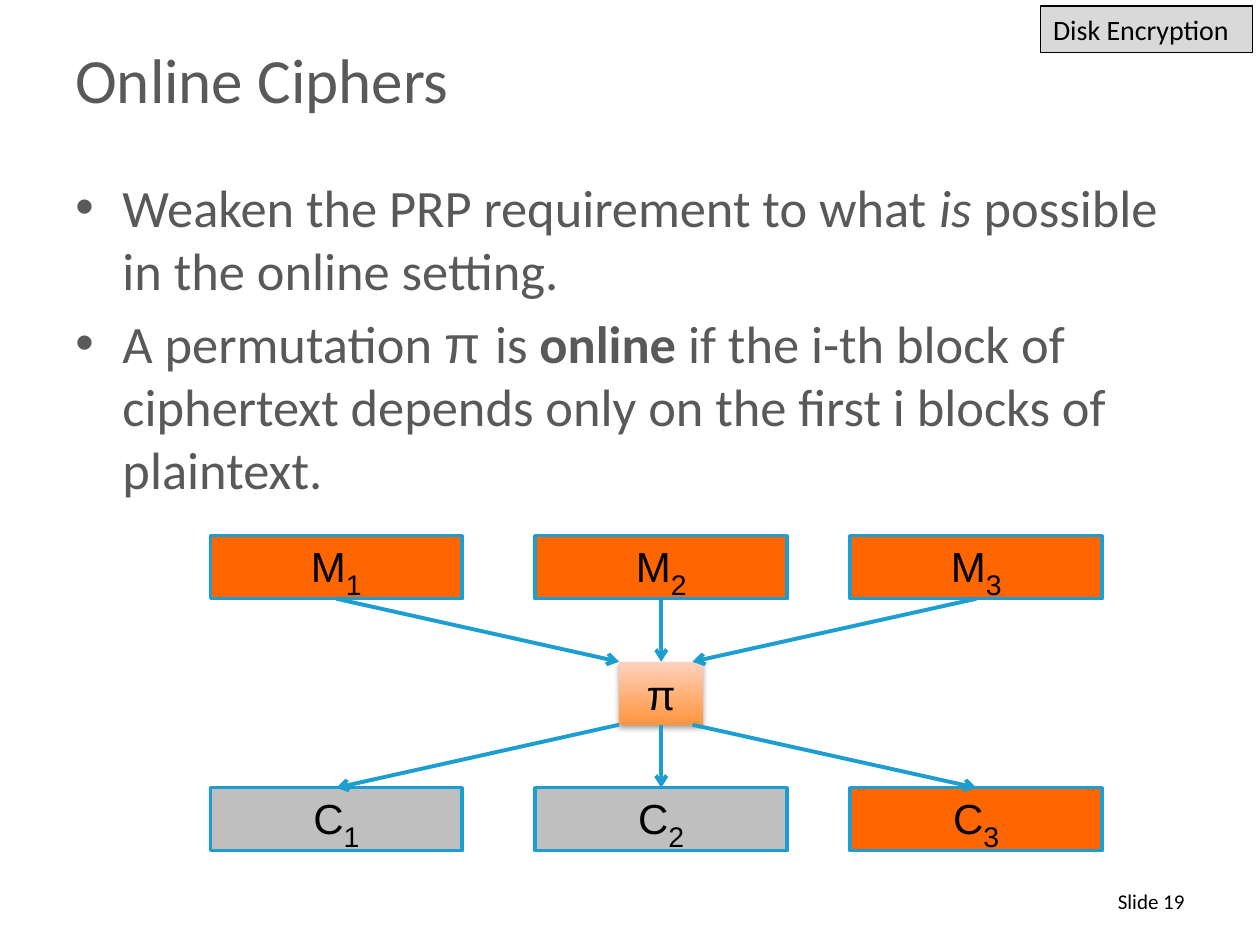
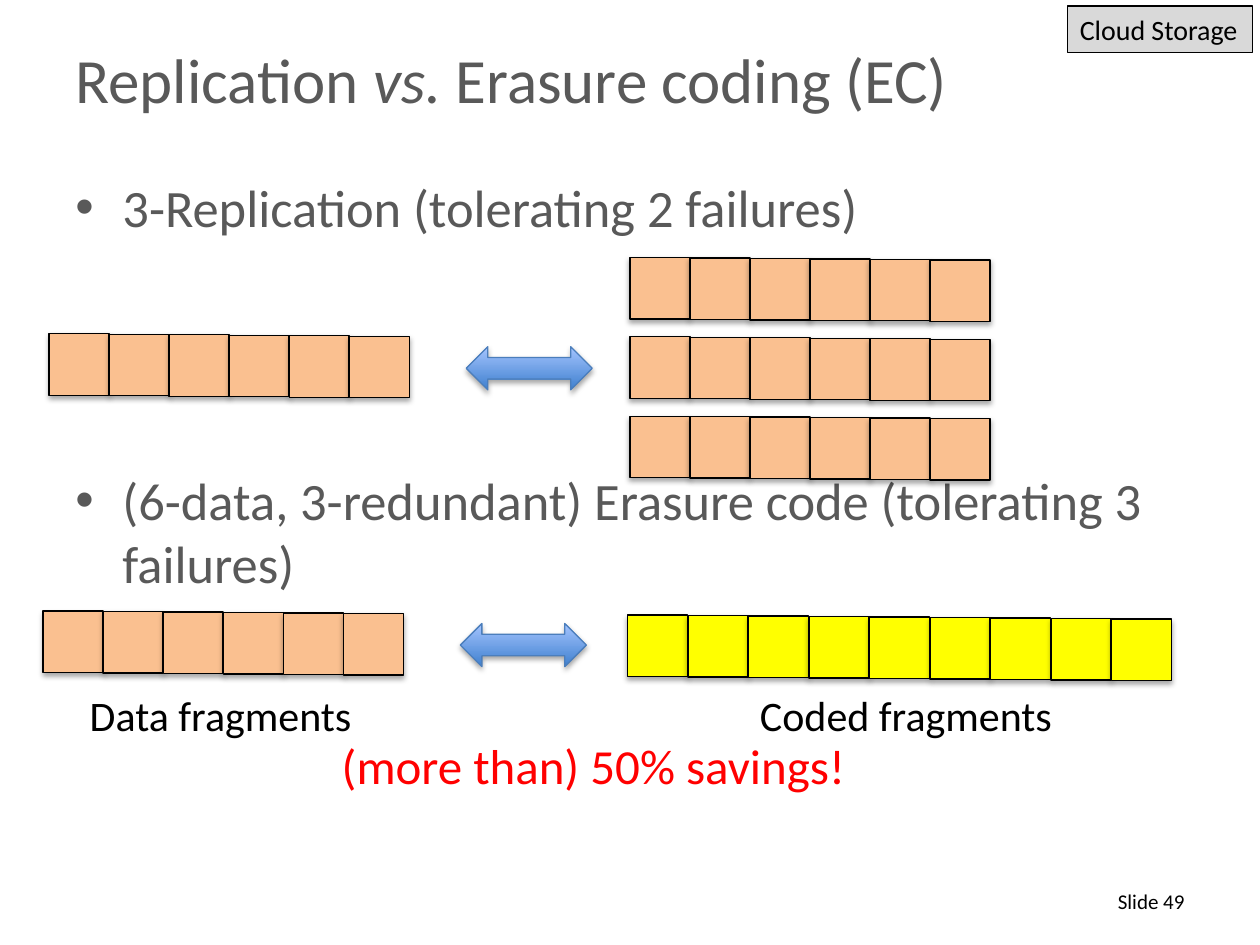
import collections

import pptx
import pptx.dml.color
import pptx.enum.shapes
import pptx.enum.text
import pptx.oxml
import pptx.oxml.ns
import pptx.util

Cm = pptx.util.Cm
Pt = pptx.util.Pt
qn = pptx.oxml.ns.qn
SHAPES = pptx.enum.shapes.MSO_SHAPE
ALIGN = pptx.enum.text.PP_ALIGN
ANCHOR = pptx.enum.text.MSO_ANCHOR

COLORS = {
    "heading": "595959",
    "text": "000000",
    "tag": "D9D9D9",
    "changed": "FF6600",
    "unchanged": "BFBFBF",
    "flow": "1D9ED1",
    "cipher_low": "FF953E",
    "cipher_high": "FFD2BD",
    "data": "FAC090",
    "coded": "FFFF00",
    "arrow_low": "3F80CE",
    "arrow_high": "A4C4FF",
    "arrow_edge": "4B7EBC",
    "savings": "FF0000",
}

Box = collections.namedtuple("Box", "left top width height")  # centimetres

TITLE = Box(1.27, 0.69, 22.86, 2.21)
BODY = Box(1.27, 3.4, 22.86, 12.5)
FOOTER = Box(18.21, 17.65, 5.92, 1.02)
TAG_RIGHT, TAG_TOP, TAG_HEIGHT = 25.25, 0.12, 0.94
HANGING_INDENT = 0.95
FRAGMENT_WIDTH, FRAGMENT_HEIGHT = 1.21, 1.24
FRAGMENT_DROP = 0.01


def rgb(color):
    return pptx.dml.color.RGBColor.from_string(COLORS[color])


def emu(box):
    return [Cm(length) for length in box]


def add_run(paragraph, text, size, color="text", font="Calibri",
            bold=False, italic=False, baseline=None):
    run = paragraph.add_run()
    run.text = text
    run.font.size = Pt(size)
    run.font.name = font
    run.font.bold = bold
    run.font.italic = italic
    run.font.color.rgb = rgb(color)
    if baseline is not None:
        run.font._element.set("baseline", str(baseline * 1000))


def add_text(slide, box, runs, size, color="text", align=ALIGN.LEFT, anchor=ANCHOR.TOP):
    """Add a one-paragraph text box; runs are (text, options) pairs."""
    frame = slide.shapes.add_textbox(*emu(box)).text_frame
    frame.word_wrap = True
    frame.vertical_anchor = anchor
    frame.paragraphs[0].alignment = align
    for text, options in runs:
        add_run(frame.paragraphs[0], text, size, color, **options)


def add_filled(slide, kind, box, fill, edge=None, edge_width=0.75, shadow=False):
    """Add a preset shape; a pair of fill colours runs from bottom to top."""
    shape = slide.shapes.add_shape(kind, *emu(box))
    if isinstance(fill, tuple):
        shape.fill.gradient()
        shape.fill.gradient_angle = 90
        for stop, color in zip(shape.fill.gradient_stops, fill):
            stop.color.rgb = rgb(color)
    else:
        shape.fill.solid()
        shape.fill.fore_color.rgb = rgb(fill)
    if edge:
        shape.line.color.rgb = rgb(edge)
        shape.line.width = Pt(edge_width)
    else:
        shape.line.fill.background()
    shape.shadow.inherit = False
    if shadow:
        effects = shape._element.spPr.find(qn("a:effectLst"))
        outer = pptx.oxml.parse_xml(
            f'<a:outerShdw {pptx.oxml.ns.nsdecls("a")} blurRad="{Pt(3.1)}" dist="{Pt(1.8)}" '
            f'dir="5400000" rotWithShape="0"><a:srgbClr val="{COLORS["text"]}">'
            '<a:alpha val="35000"/></a:srgbClr></a:outerShdw>')
        effects.append(outer)
    return shape


def add_flow(slide, start, end):
    """Add an arrow between two points in centimetres."""
    flow = slide.shapes.add_connector(
        pptx.enum.shapes.MSO_CONNECTOR.STRAIGHT, *emu(start + end))
    flow.line.color.rgb = rgb("flow")
    flow.line.width = Pt(2.25)
    properties = flow._element.spPr
    head = properties.find(qn("a:ln")).makeelement(qn("a:tailEnd"), {"type": "arrow"})
    properties.find(qn("a:ln")).append(head)
    properties.append(properties.makeelement(qn("a:effectLst"), {}))


def add_tag(slide, text, width):
    box = Box(TAG_RIGHT - width, TAG_TOP, width, TAG_HEIGHT)
    frame = add_filled(slide, SHAPES.RECTANGLE, box, "tag", "text").text_frame
    frame.word_wrap = True
    frame.margin_right = 0
    frame.vertical_anchor = ANCHOR.TOP
    frame.paragraphs[0].alignment = ALIGN.LEFT
    add_run(frame.paragraphs[0], text, 16)


def add_bullets(slide, box, bullets, gap):
    frame = slide.shapes.add_textbox(*emu(box)).text_frame
    frame.word_wrap = True
    for index, runs in enumerate(bullets):
        paragraph = frame.add_paragraph() if index else frame.paragraphs[0]
        properties = paragraph._p.get_or_add_pPr()
        properties.set("marL", str(Cm(HANGING_INDENT)))
        properties.set("indent", str(-Cm(HANGING_INDENT)))
        for tag, attributes in (("a:buFont", {"typeface": "Arial"}),
                                ("a:buChar", {"char": "•"})):
            properties.append(properties.makeelement(qn(tag), attributes))
        if index:
            paragraph.space_before = Pt(gap)
        for text, options in runs:
            add_run(paragraph, text, 30, "heading", **options)


def add_content_slide(deck, title, tag, tag_width, number, bullets, gap):
    """Add a slide with the shared title, bullets, corner tag and footer."""
    slide = deck.slides.add_slide(deck.slide_layouts[6])
    add_text(slide, TITLE, title, 36, "heading")
    add_bullets(slide, BODY, bullets, gap)
    add_text(slide, FOOTER, [(f"Slide {number}", {})], 12,
             align=ALIGN.RIGHT, anchor=ANCHOR.MIDDLE)
    add_tag(slide, tag, tag_width)
    return slide


def add_block(slide, box, letter, index, fill):
    block = add_filled(slide, SHAPES.RECTANGLE, box, fill, "flow", 2)
    paragraph = block.text_frame.paragraphs[0]
    paragraph.alignment = ALIGN.CENTER
    add_run(paragraph, letter, 24, font="Arial")
    add_run(paragraph, str(index), 28, font="Arial", baseline=-25)


def add_permutation_diagram(slide, box):
    """Message blocks above, the permutation between, cipher blocks below."""
    block_width, row = 5.08, box.height / 5
    lefts = [box.left, box.left + 6.55, box.left + box.width - block_width]
    message_bottom = box.top + row
    pi_top, pi_bottom = box.top + 2 * row, box.top + 3 * row
    cipher_top = box.top + 4 * row
    pi = Box(lefts[1] + block_width / 2 - 0.85, pi_top, 1.7, row)

    cipher = add_filled(slide, SHAPES.RECTANGLE, pi,
                        ("cipher_low", "cipher_high"), shadow=True)
    cipher.text_frame.paragraphs[0].alignment = ALIGN.CENTER
    add_run(cipher.text_frame.paragraphs[0], "π", 24, font="Arial")

    pi_ports = [pi.left, pi.left + pi.width / 2, pi.left + 1.48]
    cipher_fills = ["unchanged", "unchanged", "changed"]
    for index, (left, port, fill) in enumerate(zip(lefts, pi_ports, cipher_fills), 1):
        add_block(slide, Box(left, box.top, block_width, row), "M", index, "changed")
        add_block(slide, Box(left, cipher_top, block_width, row), "C", index, fill)
        center = left + block_width / 2
        add_flow(slide, (center, message_bottom), (port, pi_top))
        add_flow(slide, (port, pi_bottom), (center, cipher_top))


def add_fragments(slide, left, top, count, fill, step=FRAGMENT_WIDTH):
    for index in range(count):
        box = Box(left + index * step, top + index * FRAGMENT_DROP,
                  FRAGMENT_WIDTH, FRAGMENT_HEIGHT)
        add_filled(slide, SHAPES.RECTANGLE, box, fill, "text", shadow=True)


def add_exchange_arrow(slide, left, top):
    add_filled(slide, SHAPES.LEFT_RIGHT_ARROW, Box(left, top, 2.54, 0.87),
               ("arrow_low", "arrow_high"), "arrow_edge", shadow=True)


def add_replication(slide, box):
    """Six data fragments facing three full copies of them."""
    add_fragments(slide, box.left, box.top + 1.54, 6, "data")
    add_exchange_arrow(slide, box.left + 8.41, box.top + 1.8)
    for replica in range(3):
        add_fragments(slide, box.left + box.width - 6 * FRAGMENT_WIDTH,
                      box.top + replica * 1.6, 6, "data")


def add_erasure_coding(slide, box):
    """Six data fragments facing nine coded ones, with captions below."""
    coded_left = box.left + 11.78
    add_fragments(slide, box.left, box.top, 6, "data")
    add_exchange_arrow(slide, box.left + 8.41, box.top + 0.25)
    add_fragments(slide, coded_left, box.top + 0.08, 9, "coded", 1.22)
    captions = [
        ("Data fragments", 0.69, 1.45, 6.2, 24, "text"),
        ("Coded fragments", 14.2, 1.45, 6.96, 24, "text"),
        ("(more than) 50% savings!", 5.77, 2.39, 11.2, 28, "savings"),
    ]
    for text, left, top, width, size, color in captions:
        place = Box(box.left + left, box.top + top, width, 1.3)
        add_text(slide, place, [(text, {})], size, color)


def main():
    deck = pptx.Presentation()
    deck.slide_width, deck.slide_height = Cm(25.4), Cm(19.05)

    online = add_content_slide(
        deck, [("Online Ciphers", {})], "Disk Encryption", 4.27, 19,
        [[("Weaken the PRP requirement to what ", {}), ("is", {"italic": True}),
          (" possible in the online setting.", {})],
         [("A permutation ", {}), ("π ", {"font": "Arial"}), ("is ", {}),
          ("online", {"bold": True}),
          (" if the i-th block of ciphertext depends only on the first i blocks"
           " of plaintext.", {})]], gap=6)
    add_permutation_diagram(online, Box(4.24, 10.8, 17.98, 6.35))

    coding = add_content_slide(
        deck,
        [("Replication ", {}), ("vs. ", {"italic": True}), ("Erasure coding (EC)", {})],
        "Cloud Storage", 3.73, 49,
        [[("3-Replication (tolerating 2 failures)", {})],
         [("(6-data, 3-redundant) Erasure code (tolerating 3 failures)", {})]], gap=131.5)
    add_replication(coding, Box(0.99, 5.19, 18.97, 4.46))
    add_erasure_coding(coding, Box(0.87, 12.32, 22.75, 3.7))

    deck.save("out.pptx")


if __name__ == "__main__":
    main()
